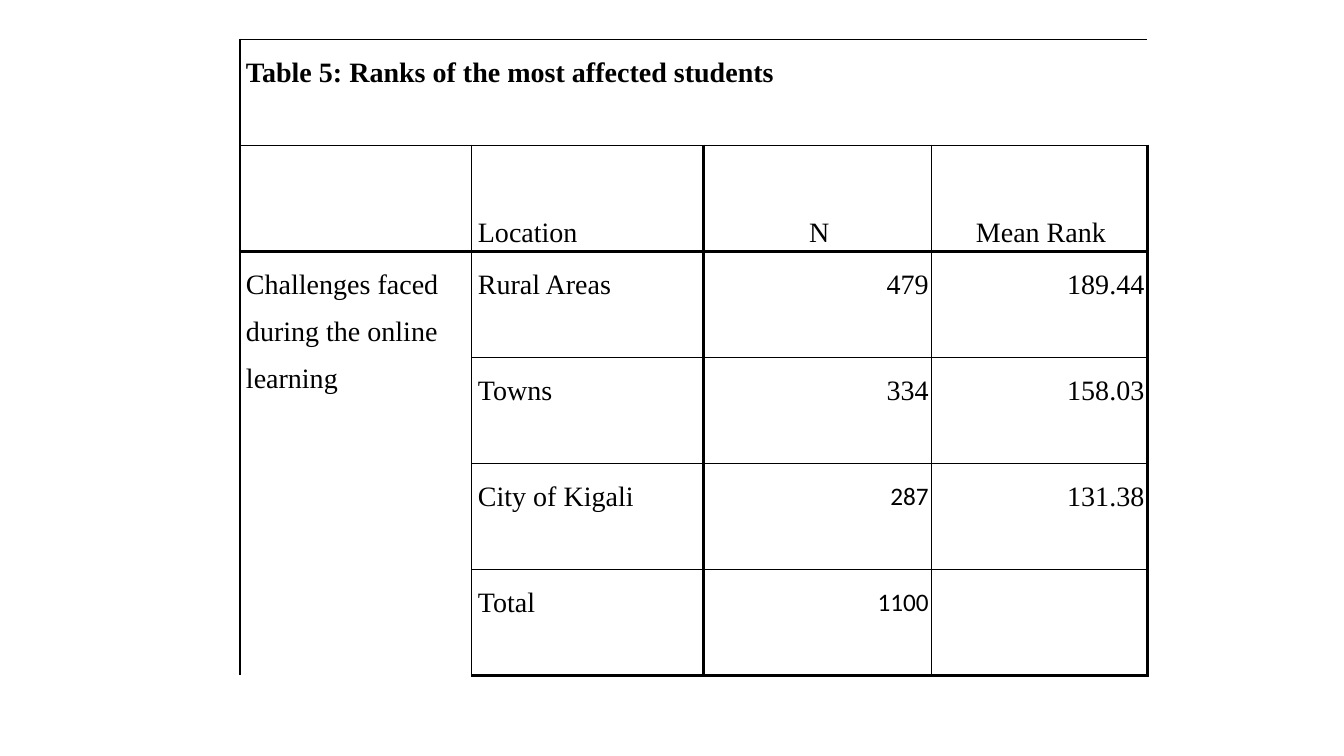
from lxml import etree
from pptx import Presentation
from pptx import util as u
from pptx.dml import color
from pptx.enum import text
from pptx.oxml import ns

HUES = {"ink": "000000", "paper": "FFFFFF"}
COLS = [2.3, 2.3, 2.26, 2.14]
ROWS = [
    ["Table 5: Ranks of the most affected students", "", "", ""],
    ["", "Location", "N", "Mean Rank"],
    ["Challenges faced during the online learning", "Rural Areas", "479", "189.44"],
    ["", "Towns", "334", "158.03"],
    ["", "City of Kigali", "287", "131.38"],
    ["", "Total", "1100", ""],
]
MERGES = [(0, 0, 0, 3), (2, 0, 5, 0)]  # top, left, bottom, right
ACROSS = [1, 1, 2.25, 1, 1, 1, 2.25]  # rule widths from top to bottom
DOWN = [2.25, 1, 2.25, 1, 2.25]  # rule widths from left to right
SERIF = {"name": "Times New Roman", "size": u.Pt(20)}
SANS = {"name": "Calibri", "size": u.Pt(18)}
PAD = u.Inches(0.03)


def rgb(key):
    return color.RGBColor.from_string(HUES[key])


def put(item, vals):
    for key, val in vals.items():
        setattr(item, key, val)


def block(row, col):
    """Give the merged area that holds a cell."""
    for area in MERGES:
        top, left, low, right = area
        if top <= row <= low and left <= col <= right:
            return area
    return row, col, row, col


def rule(cell, row, col):
    """Draw the cell's borders, but none inside a merged area."""
    top, left, low, right = block(row, col)
    down = DOWN if row else [1] * len(DOWN)
    edges = [
        ("a:lnL", col == left, down[col]),
        ("a:lnR", col == right, down[col + 1]),
        ("a:lnT", row == top, ACROSS[row]),
        ("a:lnB", row == low, ACROSS[row + 1]),
    ]
    props = cell._tc.get_or_add_tcPr()
    for spot, (tag, outer, width) in enumerate(edges):
        line = etree.Element(ns.qn(tag), w=str(int(u.Pt(width))))
        if outer:
            fill = etree.SubElement(line, ns.qn("a:solidFill"))
            etree.SubElement(fill, ns.qn("a:srgbClr"), val=HUES["ink"])
        else:
            etree.SubElement(line, ns.qn("a:noFill"))
        props.insert(spot, line)


def write(cell, words, row, col):
    """Set the cell's text and its layout."""
    put(cell, {"margin_left": PAD, "margin_right": PAD,
               "margin_top": PAD, "margin_bottom": PAD})
    if row == 1:
        cell.vertical_anchor = text.MSO_ANCHOR.BOTTOM
    if not words:
        return
    para = cell.text_frame.paragraphs[0]
    side = text.PP_ALIGN.LEFT
    if col > 1:
        side = text.PP_ALIGN.CENTER if row == 1 else text.PP_ALIGN.RIGHT
    put(para, {"alignment": side, "line_spacing": 1.5})
    para._p.get_or_add_pPr().set("marL", str(int(PAD)))
    run = para.add_run()
    run.text = words
    put(run.font, SANS if col == 2 and row > 3 else SERIF)
    run.font.bold = row == 0
    run.font.color.rgb = rgb("ink")


def ranks(slide, x, y, w, h):
    """Place the table of ranks in its box."""
    frame = slide.shapes.add_table(len(ROWS), len(COLS), x, y, w, h)
    table = frame.table
    put(table, {"first_row": False, "horz_banding": False})
    for col, wide in zip(table.columns, COLS):
        col.width = int(w * wide / sum(COLS))
    for row in table.rows:
        row.height = int(h / len(ROWS))

    # Merged areas
    for top, left, low, right in MERGES:
        table.cell(top, left).merge(table.cell(low, right))

    # Cells
    for r, line in enumerate(ROWS):
        for c, words in enumerate(line):
            cell = table.cell(r, c)
            cell.fill.solid()
            cell.fill.fore_color.rgb = rgb("paper")
            write(cell, words, r, c)
            rule(cell, r, c)


def main():
    deck = Presentation()
    put(deck, {"slide_width": u.Inches(13.33), "slide_height": u.Inches(7.5)})
    slide = deck.slides.add_slide(deck.slide_layouts[6])
    ranks(slide, u.Inches(2.38), u.Inches(0.39), u.Inches(9), u.Inches(6.31))
    deck.save("out.pptx")


if __name__ == "__main__":
    main()
